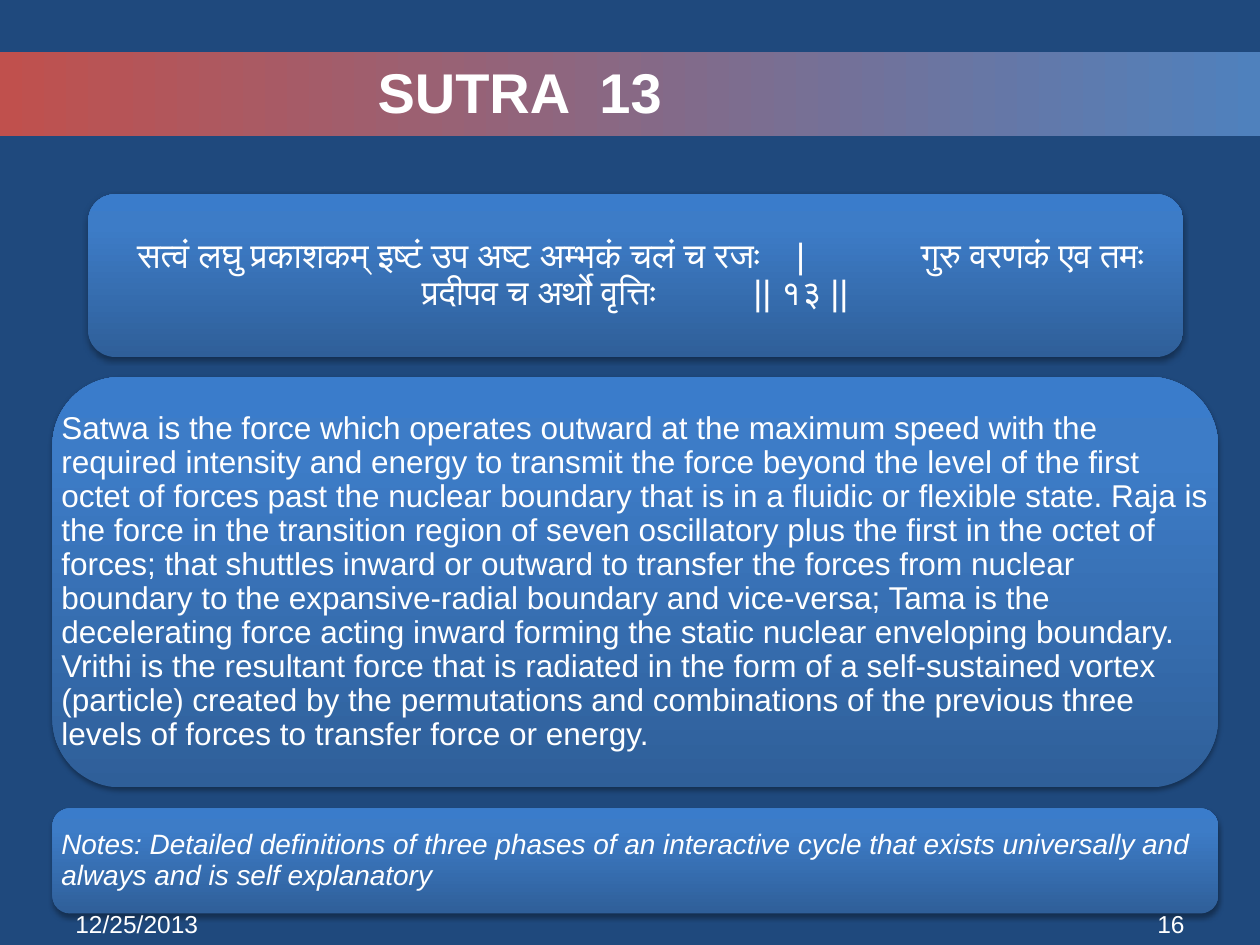
from copy import deepcopy

from lxml.etree import SubElement
from pptx import Presentation
from pptx.dml.color import RGBColor
from pptx.enum.shapes import MSO_SHAPE as Shape
from pptx.enum.text import MSO_ANCHOR as Anchor, PP_ALIGN as Align
from pptx.oxml.ns import qn
from pptx.util import Inches, Pt

NAVY = RGBColor(0x1F, 0x49, 0x7D)
RED = RGBColor(0xC0, 0x50, 0x4D)
BLUE = RGBColor(0x4F, 0x81, 0xBD)
PANEL_DARK = RGBColor(0x2F, 0x5F, 0x99)
PANEL_MID = RGBColor(0x3D, 0x7C, 0xC7)
PANEL_LIGHT = RGBColor(0x3A, 0x7C, 0xCB)
WHITE = RGBColor(0xFF, 0xFF, 0xFF)

FONT = "Arial"
WIDTH, HEIGHT = Inches(10), Inches(7.5)
COLUMNS, ROWS = 24, 18

VERSE = [
    ("\tसत्वं लघु प्रकाशकम् इष्टं उप अष्ट अम्भकं चलं च रजः\t|\tगुरु वरणकं एव तमः", (0.29, 5.52, 6.51)),
    ("\tप्रदीपव च अर्थो वृत्तिः\t|| १३ ||", (2.55, 5.18)),
]
MEANING = (
    "Satwa is the force which operates outward at the maximum speed with the "
    "required intensity and energy to transmit the force beyond the level of the first "
    "octet of forces past the nuclear boundary that is in a fluidic or flexible state. Raja "
    "is the force in the transition region of seven oscillatory plus the first in the octet of "
    "forces; that shuttles inward or outward to transfer the forces from nuclear "
    "boundary to the expansive-radial boundary and vice-versa; Tama is the "
    "decelerating force acting inward forming the static nuclear enveloping boundary. "
    "Vrithi is the resultant force that is radiated in the form of a self-sustained vortex "
    "(particle) created by the permutations and combinations of the previous three "
    "levels of forces to transfer force or energy."
)
NOTES = (
    "Notes: Detailed definitions of three phases of an interactive cycle that exists "
    "universally and always and is self explanatory"
)


def grid_box(column, row, columns, rows):
    """Turn grid cells into left, top, width and height."""
    return (round(column * WIDTH / COLUMNS), round(row * HEIGHT / ROWS),
            round(columns * WIDTH / COLUMNS), round(rows * HEIGHT / ROWS))


def fill_gradient(shape, angle, stops):
    shape.fill.gradient()
    shape.fill.gradient_angle = angle
    stop_list = shape._element.spPr.find(qn("a:gradFill")).find(qn("a:gsLst"))
    for _ in stops[2:]:
        stop_list.append(deepcopy(stop_list[-1]))
    for stop, (position, color) in zip(shape.fill.gradient_stops, stops):
        stop.position = position
        stop.color.rgb = color


def add_soft_shadow(shape):
    effects = shape._element.spPr.find(qn("a:effectLst"))
    shadow = SubElement(effects, qn("a:outerShdw"), blurRad=str(Pt(3.1)),
                        dist=str(Pt(1.8)), dir="5400000", rotWithShape="0")
    color = SubElement(shadow, qn("a:srgbClr"), val="000000")
    SubElement(color, qn("a:alpha"), val="35000")


def add_shape(slide, kind, box):
    shape = slide.shapes.add_shape(kind, *box)
    shape.shadow.inherit = False
    shape.line.fill.background()
    return shape


def add_text(slide, box, lines, size, align=Align.LEFT, anchor=Anchor.MIDDLE,
             inset=0.1, top_inset=0.05, spacing=1.0, bold=False, italic=False):
    """Add a text box; each line is a text and its tab stops in inches."""
    frame = slide.shapes.add_textbox(*box).text_frame
    frame.word_wrap = True
    frame.vertical_anchor = anchor
    frame.margin_left = frame.margin_right = Inches(inset)
    frame.margin_top = frame.margin_bottom = Inches(top_inset)
    for index, (text, tabs) in enumerate(lines):
        paragraph = frame.add_paragraph() if index else frame.paragraphs[0]
        paragraph.text = text
        paragraph.alignment = align
        paragraph.line_spacing = spacing
        if tabs:
            tab_list = SubElement(paragraph._p.get_or_add_pPr(), qn("a:tabLst"))
            for tab in tabs:
                SubElement(tab_list, qn("a:tab"), pos=str(Inches(tab)), algn="l")
        font = paragraph.font
        font.name, font.size = FONT, Pt(size)
        font.bold, font.italic = bold, italic
        font.color.rgb = WHITE


def add_title_band(slide, box):
    left, top, width, height = box
    band = add_shape(slide, Shape.RECTANGLE, box)
    fill_gradient(band, 0, [(0, RED), (1, BLUE)])
    title_box = (left + width // 20, top, round(width * 0.725), round(height * 0.93))
    add_text(slide, title_box, [("SUTRA  13", ())], 32, Align.CENTER, bold=True)


def add_panel(slide, box, lines, size, inset=0.07, italic=False):
    panel = add_shape(slide, Shape.ROUNDED_RECTANGLE, box)
    fill_gradient(panel, 90, [(0, PANEL_DARK), (0.8, PANEL_MID), (1, PANEL_LIGHT)])
    add_soft_shadow(panel)
    add_text(slide, box, lines, size, inset=inset, top_inset=inset,
             spacing=0.9, italic=italic)


def add_footer(slide, box):
    left, top, width, height = box
    part = round(width * 0.26)
    add_text(slide, (left, top, part, height), [("12/25/2013", ())], 14,
             anchor=Anchor.TOP)
    add_text(slide, (left + width - part, top, part, height), [("16", ())], 14,
             Align.RIGHT, Anchor.TOP)


def main():
    presentation = Presentation()
    presentation.slide_width, presentation.slide_height = WIDTH, HEIGHT
    slide = presentation.slides.add_slide(presentation.slide_layouts[6])
    slide.background.fill.solid()
    slide.background.fill.fore_color.rgb = NAVY

    add_title_band(slide, grid_box(0, 1, COLUMNS, 1.6))
    add_panel(slide, grid_box(1.68, 3.7, 20.86, 3.1), VERSE, 20, inset=0.1)
    add_panel(slide, grid_box(1, 7.18, 22.2, 7.82), [(MEANING, ())], 18)
    add_panel(slide, grid_box(1, 15.4, 22.2, 2), [(NOTES, ())], 16, italic=True)
    add_footer(slide, grid_box(1.2, 17.2, 21.6, 0.65))
    presentation.save("out.pptx")


if __name__ == "__main__":
    main()
